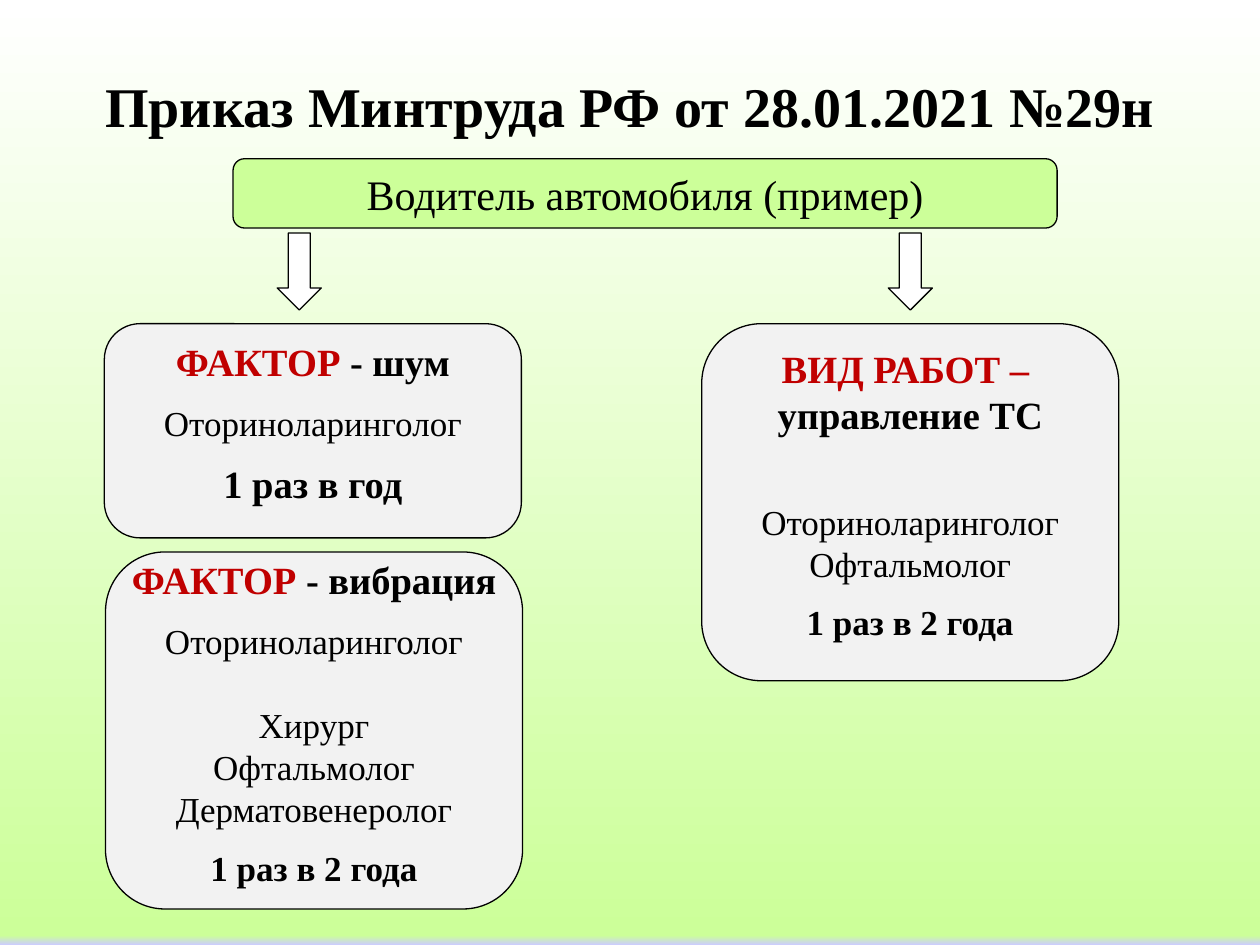
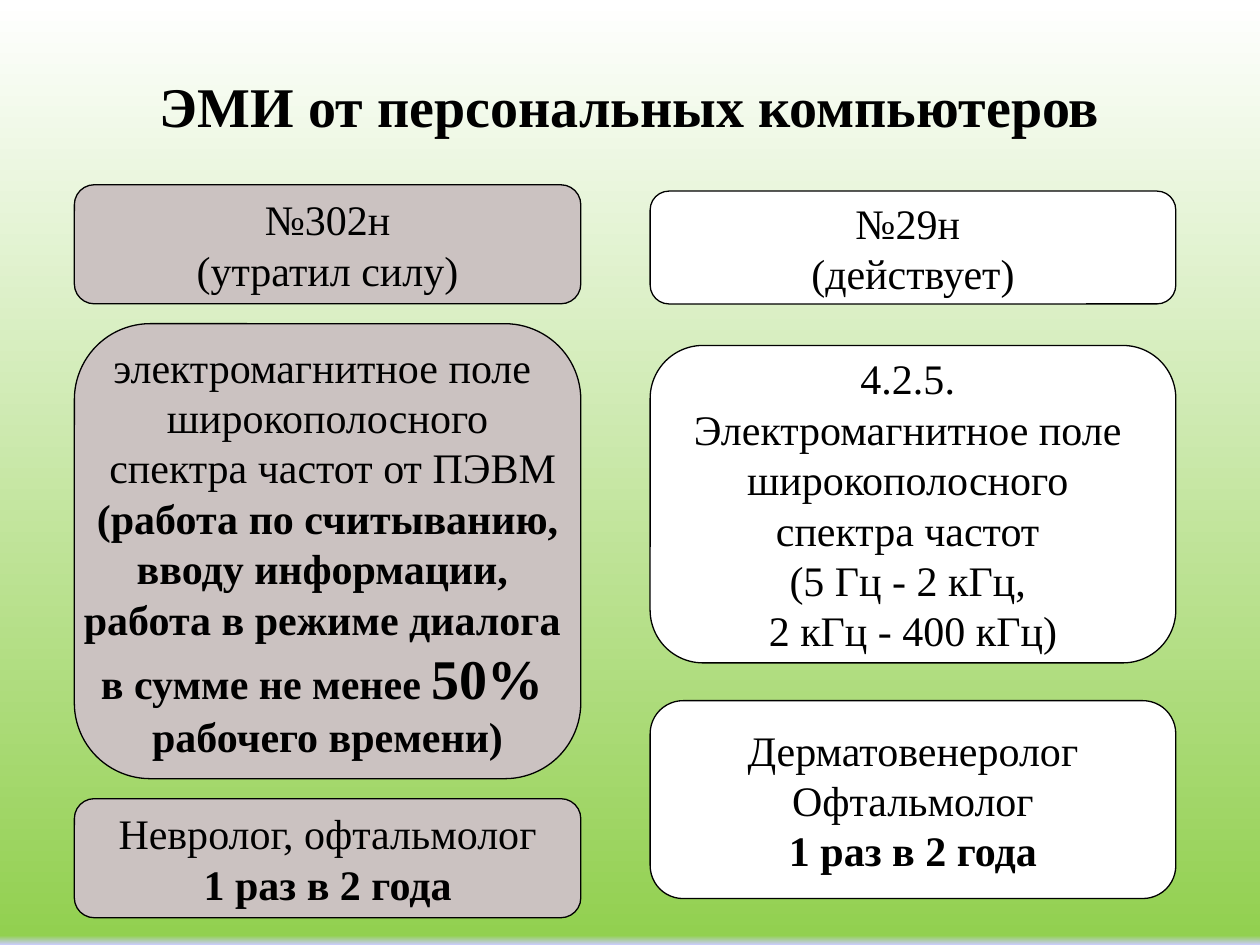
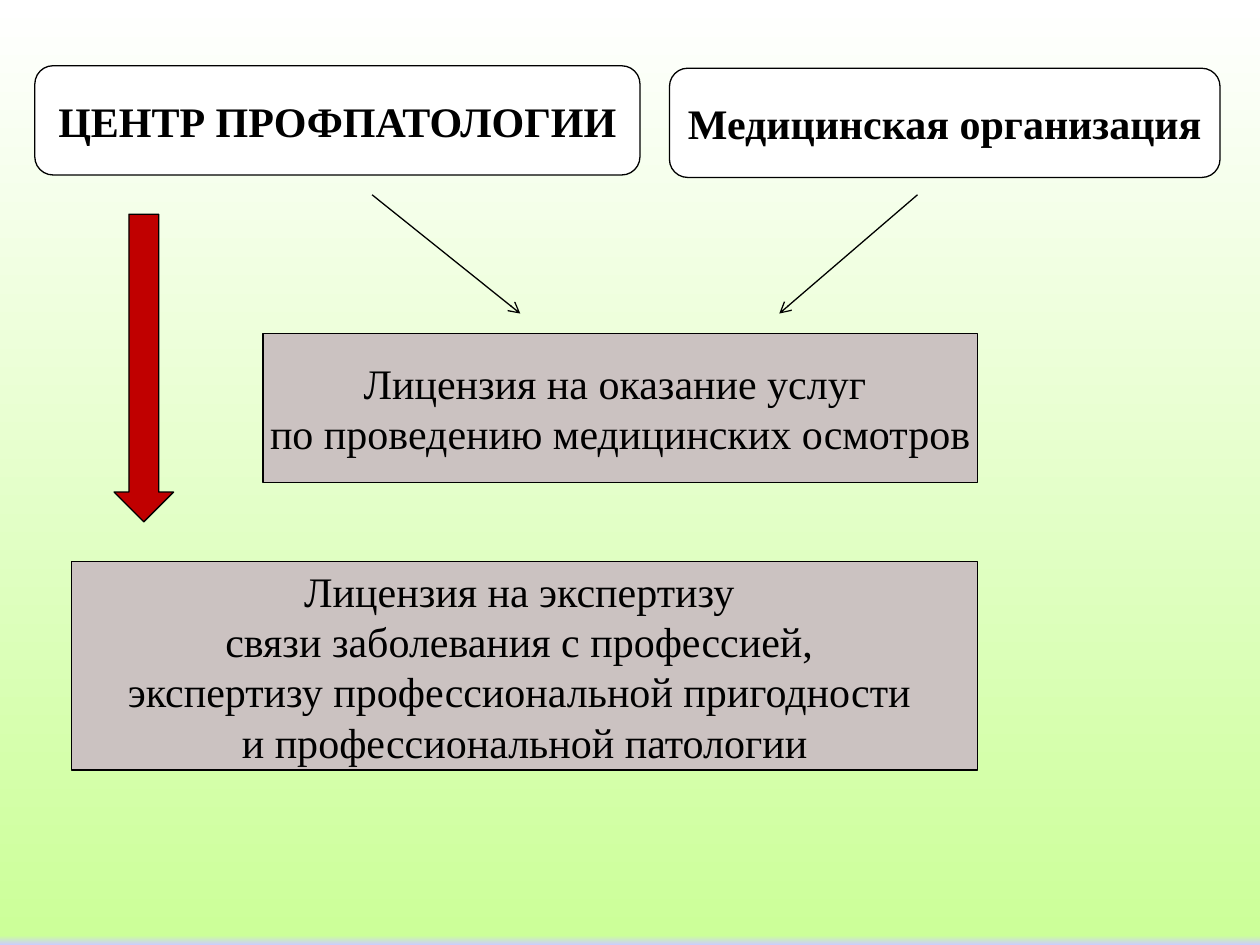
import copy
from dataclasses import dataclass

import lxml.etree
import pptx
import pptx.dml.color
import pptx.enum.shapes
import pptx.enum.text
import pptx.oxml.ns
import pptx.util

Pt = pptx.util.Pt
SHAPES = pptx.enum.shapes.MSO_SHAPE
FONT = "Times New Roman"
LEADING = 1.2
GAP = 9.6
COLORS = {
    "black": "000000", "white": "FFFFFF", "red": "C00000", "card": "F2F2F2",
    "lime": "CCFF99", "green": "92D050", "lavender": "CCCCFF", "taupe": "CBC2C1",
}
STYLES = {
    "title": (32, True, "black"),
    "accent": (22, True, "red"),
    "heading": (22, True, "black"),
    "doctor": (20, False, "black"),
    "period": (20, True, "black"),
    "body": (24, False, "black"),
    "strong": (24, True, "black"),
}


@dataclass
class Box:
    """Area in points."""
    left: float
    top: float
    width: float
    height: float

    def inner(self, left, top, width, height):
        """Return an area offset from this one's corner."""
        return Box(self.left + left, self.top + top, width, height)

    def lengths(self):
        """Return the four lengths for python-pptx."""
        return [Pt(n) for n in (self.left, self.top, self.width, self.height)]


@dataclass
class Line:
    """One line of styled spans, with the space above it."""
    spans: list
    gap: float = 0


def line(text, style="body", gap=0):
    """Return a line in a single style."""
    return Line([(text, style)], gap)


def lines(*texts, style="body"):
    """Return several lines that share a style."""
    return [line(text, style) for text in texts]


def rgb(name):
    """Look up a named colour."""
    return pptx.dml.color.RGBColor.from_string(COLORS[name])


def paint_background(slide, base):
    """Fade the slide from white to the base colour, with a lavender edge."""
    fill = slide.background.fill
    fill.gradient()
    fill.gradient_angle = 270
    stop_list = slide.element.find(".//" + pptx.oxml.ns.qn("a:gsLst"))
    stop_list.append(copy.deepcopy(stop_list[0]))
    fades = (("white", 0), (base, 0.99), ("lavender", 1))
    for stop, (color, position) in zip(fill.gradient_stops, fades):
        stop.color.rgb = rgb(color)
        stop.position = position


def write(frame, content, bottom=0):
    """Write centred lines into a text frame."""
    frame.word_wrap = False
    frame.vertical_anchor = pptx.enum.text.MSO_ANCHOR.MIDDLE
    frame.margin_top = 0
    frame.margin_bottom = Pt(bottom)
    for index, entry in enumerate(content):
        paragraph = frame.add_paragraph() if index else frame.paragraphs[0]
        paragraph.alignment = pptx.enum.text.PP_ALIGN.CENTER
        paragraph.space_before = Pt(entry.gap)
        tallest = max(STYLES[style][0] for _, style in entry.spans)
        paragraph.line_spacing = Pt(tallest * LEADING)
        for text, style in entry.spans:
            run = paragraph.add_run()
            run.text = text
            size, bold, color = STYLES[style]
            run.font.name = FONT
            run.font.size = Pt(size)
            run.font.bold = bold
            run.font.color.rgb = rgb(color)


def panel(slide, box, fill, content=(), kind=SHAPES.ROUNDED_RECTANGLE, bottom=0):
    """Draw an outlined shape holding the given lines."""
    shape = slide.shapes.add_shape(kind, *box.lengths())
    shape.shadow.inherit = False
    shape.fill.solid()
    shape.fill.fore_color.rgb = rgb(fill)
    shape.line.color.rgb = rgb("black")
    shape.line.width = Pt(0.75)
    write(shape.text_frame, content, bottom)


def title(slide, box, text):
    """Write the slide title across the head of the slide."""
    heading = slide.shapes.add_textbox(*box.inner(31, 26, 658, 67.6).lengths())
    write(heading.text_frame, [line(text, "title")])


def thin_arrow(slide, box, start, end):
    """Draw a thin line with an open arrowhead between two points."""
    points = [Pt(n) for n in (box.left + start[0], box.top + start[1],
                              box.left + end[0], box.top + end[1])]
    arrow = slide.shapes.add_connector(pptx.enum.shapes.MSO_CONNECTOR.STRAIGHT, *points)
    arrow.line.color.rgb = rgb("black")
    arrow.line.width = Pt(0.75)
    qn = pptx.oxml.ns.qn
    outline = arrow.line._get_or_add_ln()
    lxml.etree.SubElement(outline, qn("a:tailEnd"), type="arrow")
    lxml.etree.SubElement(arrow._element.spPr, qn("a:effectLst"))


def driver_example(slide, box):
    """Show which examinations a driver needs, by factor and kind of work."""
    title(slide, box, "Приказ Минтруда РФ от 28.01.2021 №29н")
    panel(slide, box.inner(133.2, 90.7, 470.9, 39.6), "lime",
          lines("Водитель автомобиля (пример)"))
    for left in (158.4, 507.6):
        panel(slide, box.inner(left, 133.2, 25.2, 44), "white", kind=SHAPES.DOWN_ARROW)

    noise = [
        Line([("ФАКТОР", "accent"), (" - шум", "heading")]),
        line("Оториноларинголог", "doctor", GAP),
        line("1 раз в год", "heading", GAP),
    ]
    vibration = [
        Line([("ФАКТОР", "accent"), (" - вибрация", "heading")]),
        line("Оториноларинголог", "doctor", GAP),
        line("Хирург", "doctor", 24),
        *lines("Офтальмолог", "Дерматовенеролог", style="doctor"),
        line("1 раз в 2 года", "period", GAP),
    ]
    driving = [
        line("ВИД РАБОТ – ", "accent"),
        line("управление ТС", "heading"),
        line("Оториноларинголог", "doctor", 26.4 + GAP),
        line("Офтальмолог", "doctor"),
        line("1 раз в 2 года", "period", GAP),
    ]
    cards = ((59.6, 185, 122.4, noise), (60.3, 315.4, 204, vibration),
             (401, 185, 204, driving))
    for left, top, height, content in cards:
        panel(slide, box.inner(left, top, 238.3, height), "card", content, bottom=GAP)


def order_column(slide, box, fill, blocks):
    """Stack the blocks of one order, each with its top and height."""
    for top, height, content in blocks:
        panel(slide, box.inner(0, top, box.width, height), fill, content)


def order_comparison(slide, box):
    """Compare the repealed order with the one in force."""
    title(slide, box, "ЭМИ от персональных компьютеров")
    old_field = [
        *lines("электромагнитное поле ", "широкополосного", " спектра частот от ПЭВМ"),
        *lines(" (работа по считыванию, ", "вводу информации, ",
               "работа в режиме диалога ", style="strong"),
        Line([("в сумме не менее ", "strong"), ("50%", "title"), (" ", "strong")]),
        line("рабочего времени)", "strong"),
    ]
    new_field = lines("4.2.5. ", "Электромагнитное поле ", "широкополосного ",
                      "спектра частот ", "(5 Гц - 2 кГц, ", "2 кГц - 400 кГц)")
    period = line("1 раз в 2 года", "strong")
    order_column(slide, box.inner(42.5, 105.6, 289.4, 418.4), "taupe", (
        (0, 68, lines("№302н", "(утратил силу)")),
        (79.4, 260, old_field),
        (350.8, 68, [line("Невролог, офтальмолог"), period]),
    ))
    order_column(slide, box.inner(371.5, 109.2, 300.4, 404.3), "white", (
        (0, 64.5, lines("№29н ", "(действует)")),
        (88.2, 181.4, new_field),
        (291.2, 113.1, [*lines("Дерматовенеролог", "Офтальмолог"), period]),
    ))


def licences(slide, box):
    """Link each kind of institution to the licences it needs."""
    panel(slide, box.inner(19.9, 37.6, 345.8, 62.4), "white",
          lines("ЦЕНТР ПРОФПАТОЛОГИИ", style="strong"))
    panel(slide, box.inner(382.6, 39, 314.6, 62.4), "white",
          lines("Медицинская организация", style="strong"))
    panel(slide, box.inner(150.2, 190.6, 408.4, 85), "taupe",
          lines("Лицензия на оказание услуг ", "по проведению медицинских осмотров"),
          SHAPES.RECTANGLE)
    panel(slide, box.inner(41, 321, 517.6, 119), "taupe",
          lines("Лицензия на экспертизу ", "связи заболевания с профессией, ",
                "экспертизу профессиональной пригодности ",
                "и профессиональной патологии"),
          SHAPES.RECTANGLE)
    for start, end in ((524.3, 445.3), (212.6, 297.3)):
        thin_arrow(slide, box, (start, 111.3), (end, 179.2))
    panel(slide, box.inner(65.2, 122.4, 34, 175.8), "red", kind=SHAPES.DOWN_ARROW)


def main():
    """Build the three slides and save them."""
    deck = pptx.Presentation()
    deck.slide_width, deck.slide_height = Pt(720), Pt(540)
    page = Box(0, 0, 720, 540)
    for build, base in ((driver_example, "lime"), (order_comparison, "green"),
                        (licences, "lime")):
        slide = deck.slides.add_slide(deck.slide_layouts[6])
        paint_background(slide, base)
        build(slide, page)
    deck.save("out.pptx")


if __name__ == "__main__":
    main()
